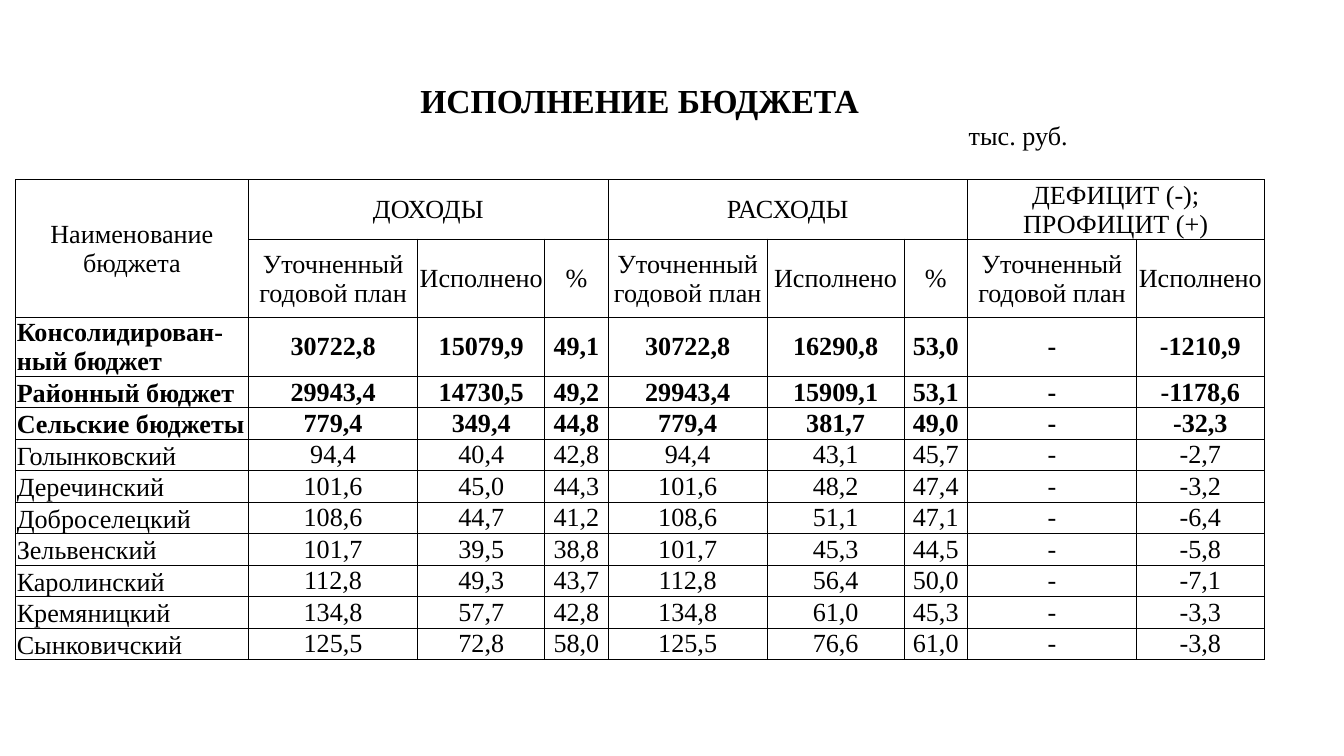
from pptx import Presentation
from pptx.util import Pt
from pptx.dml.color import RGBColor
from pptx.enum.text import PP_ALIGN as Align, MSO_ANCHOR as Anchor
from pptx.oxml import parse_xml
from pptx.oxml.ns import nsdecls, qn

BLACK = RGBColor(0x00, 0x00, 0x00)
FONT = "Times New Roman"
NO_STYLE = "{2D5ABB26-0587-4C30-8999-92F81FD0307C}"

# Column widths and row heights in points
WIDTHS = [124.8, 72.7, 18.1, 47, 21, 34, 85.2, 15.1, 58.3, 6.5, 27.4,
          90.7, 37.4, 30.9]
HEIGHTS = [21, 31.4, 31, 42, 31.3] + [16.6] * 9

# First and last grid column of each visible column or group
SPANS = [(0, 0), (1, 2), (3, 4), (5, 5), (6, 6), (7, 8), (9, 10),
         (11, 11), (12, 13)]
UNIT_SPANS = [(2, 3), (4, 5), (6, 7), (8, 9), (11, 12)]
GROUPS = [(1, 5, "ДОХОДЫ"), (6, 10, "РАСХОДЫ"),
          (11, 13, "ДЕФИЦИТ (-); ПРОФИЦИТ (+)")]
PLAN, DONE = "Уточненный годовой план", "Исполнено"
HEADS = [PLAN, DONE, "%", PLAN, DONE, "%", PLAN, DONE]

# Name, then plan, done and % of income, the same of spending, and balance
DATA = [
    ("Консолидирован-ный бюджет", "30722,8", "15079,9", "49,1", "30722,8", "16290,8", "53,0", "-", "-1210,9"),
    ("Районный бюджет", "29943,4", "14730,5", "49,2", "29943,4", "15909,1", "53,1", "-", "-1178,6"),
    ("Сельские бюджеты", "779,4", "349,4", "44,8", "779,4", "381,7", "49,0", "-", "-32,3"),
    ("Голынковский", "94,4", "40,4", "42,8", "94,4", "43,1", "45,7", "-", "-2,7"),
    ("Деречинский", "101,6", "45,0", "44,3", "101,6", "48,2", "47,4", "-", "-3,2"),
    ("Доброселецкий", "108,6", "44,7", "41,2", "108,6", "51,1", "47,1", "-", "-6,4"),
    ("Зельвенский", "101,7", "39,5", "38,8", "101,7", "45,3", "44,5", "-", "-5,8"),
    ("Каролинский", "112,8", "49,3", "43,7", "112,8", "56,4", "50,0", "-", "-7,1"),
    ("Кремяницкий", "134,8", "57,7", "42,8", "134,8", "61,0", "45,3", "-", "-3,3"),
    ("Сынковичский", "125,5", "72,8", "58,0", "125,5", "76,6", "61,0", "-", "-3,8"),
]
BOLD_ROWS = 3


def put(cell, lines, size=14, bold=False, align=Align.CENTER,
        anchor=Anchor.MIDDLE):
    cell.vertical_anchor = anchor
    frame = cell.text_frame
    for i, line in enumerate(lines):
        para = frame.add_paragraph() if i else frame.paragraphs[0]
        para.alignment = align
        run = para.add_run()
        run.text = line
        run.font.name = FONT
        run.font.size = Pt(size)
        run.font.bold = bold
        run.font.color.rgb = BLACK


def join(row, first, last, end=None):
    cell = table.cell(row, first)
    if last > first or end:
        cell.merge(table.cell(end or row, last))
    return cell


deck = Presentation()
deck.slide_width, deck.slide_height = Pt(720), Pt(405)
slide = deck.slides.add_slide(deck.slide_layouts[6])

# Empty grid without a table style
frame = slide.shapes.add_table(len(HEIGHTS), len(WIDTHS), Pt(8.3), Pt(44),
                               Pt(sum(WIDTHS)), Pt(sum(HEIGHTS)))
table = frame.table
table.first_row = table.horz_banding = False
table._tbl.tblPr.find(qn("a:tableStyleId")).text = NO_STYLE
for col, width in zip(table.columns, WIDTHS):
    col.width = Pt(width)
for row, height in zip(table.rows, HEIGHTS):
    row.height = Pt(height)

# Margins, borders and fill: the unit row has a bottom line only
for r, row in enumerate(table.rows):
    sides = "" if r == 0 else "B" if r == 1 else "LRTB"
    for cell in row.cells:
        cell.margin_left = cell.margin_right = cell.margin_top = Pt(0.7)
        cell.margin_bottom = Pt(0.7 if r > 3 else 0)
        props = cell._tc.get_or_add_tcPr()
        for side in sides:
            props.append(parse_xml(
                f'<a:ln{side} {nsdecls("a")} w="{Pt(0.5)}"><a:solidFill>'
                f'<a:srgbClr val="{BLACK}"/></a:solidFill></a:ln{side}>'))
        cell.fill.background()

# Title and unit
put(join(0, 0, 13), ["ИСПОЛНЕНИЕ БЮДЖЕТА"], 18, True)
for first, last in UNIT_SPANS:
    join(1, first, last)
put(table.cell(1, 11), ["тыс. руб."], align=Align.LEFT, anchor=Anchor.TOP)

# Two header rows
put(join(2, 0, 0, 3), ["Наименование", "бюджета"])
for first, last, text in GROUPS:
    put(join(2, first, last), [text])
for (first, last), text in zip(SPANS[1:], HEADS):
    put(join(3, first, last), [text])

# Budget rows
for i, values in enumerate(DATA):
    bold = i < BOLD_ROWS
    for (first, last), text in zip(SPANS, values):
        cell = join(4 + i, first, last)
        if first:
            put(cell, [text], bold=bold)
        else:
            cell.margin_bottom = Pt(0)
            put(cell, [text], bold=bold, align=Align.LEFT,
                anchor=Anchor.BOTTOM)

deck.save("out.pptx")
